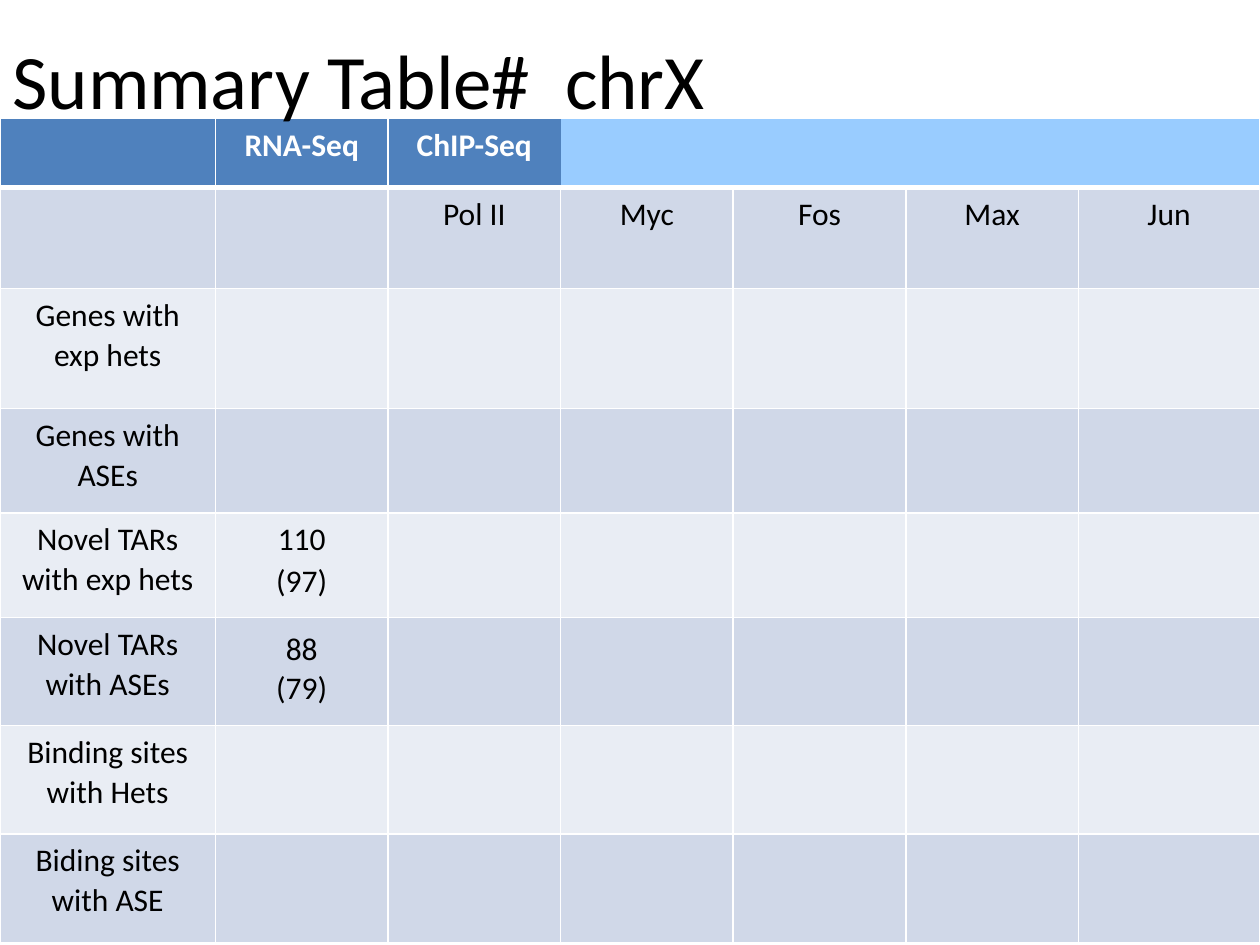
"""Build the chrX summary table slide."""
from dataclasses import dataclass

from lxml.etree import SubElement
from pptx import Presentation
from pptx.dml.color import RGBColor
from pptx.enum.text import MSO_ANCHOR, PP_ALIGN
from pptx.oxml.ns import qn
from pptx.util import Inches, Pt


@dataclass(frozen=True)
class Theme:
    font: str = "Calibri"
    title_size: int = 44
    cell_size: int = 18
    ink: str = "000000"
    white: str = "FFFFFF"
    header: str = "4F81BD"
    header_rest: str = "99CCFF"
    bands: tuple = ("E9EDF4", "D0D8E8")


THEME = Theme()


def style_paragraph(paragraph, size, color, bold=False):
    paragraph.font.name = THEME.font
    paragraph.font.size = Pt(size)
    paragraph.font.bold = bold
    paragraph.font.color.rgb = RGBColor.from_string(color)


def add_border(cell, side, width):
    line = SubElement(cell._tc.get_or_add_tcPr(), qn(f"a:ln{side}"), w=str(Pt(width)))
    if width:
        fill = SubElement(line, qn("a:solidFill"))
        SubElement(fill, qn("a:srgbClr"), val=THEME.white)
    else:
        SubElement(line, qn("a:noFill"))


column_widths = [1.71] + [1.37] * 5 + [1.44]
row_heights = [0.55, 0.8, 0.95, 0.83, 0.83, 0.86, 0.86, 0.86]
rows = [
    ["", "RNA-Seq", "ChIP-Seq"],
    ["", "", "Pol II", "Myc", "Fos", "Max", "Jun"],
    ["Genes with exp hets"],
    ["Genes with ASEs"],
    ["Novel TARs with exp hets", "110\n(97)"],
    ["Novel TARs with ASEs", "88\n(79)"],
    ["Binding sites with Hets"],
    ["Biding sites with ASE"],
]
last_column = len(column_widths) - 1
line_spacings = {(4, 1): (1.04, 1.08), (5, 1): (1.02, 1.02)}

prs = Presentation()
prs.slide_width, prs.slide_height = Inches(10), Inches(7.5)
slide = prs.slides.add_slide(prs.slide_layouts[6])

summary = slide.shapes.add_table(
    len(rows), len(column_widths), Inches(0), Inches(0.94),
    Inches(sum(column_widths)), Inches(sum(row_heights))).table
for column, width in zip(summary.columns, column_widths):
    column.width = Inches(width)

for r, (labels, height) in enumerate(zip(rows, row_heights)):
    summary.rows[r].height = Inches(height)
    is_header = r == 0
    for c in range(len(column_widths)):
        cell = summary.cell(r, c)
        cell.text = labels[c] if c < len(labels) else ""
        cell.margin_top = Inches(0.1 if (r, c) == (5, 1) else 0.05)
        spacings = line_spacings.get((r, c), (1.04,))
        for paragraph, spacing in zip(cell.text_frame.paragraphs, spacings):
            paragraph.alignment = PP_ALIGN.CENTER
            paragraph.line_spacing = spacing
            style_paragraph(paragraph, THEME.cell_size,
                            THEME.white if is_header else THEME.ink, is_header)

        add_border(cell, "L", 0 if is_header and c > 2 else 1)
        add_border(cell, "R", 0 if is_header and 2 <= c < last_column else 1)
        add_border(cell, "T", 3 if r == 1 else 1)
        add_border(cell, "B", 3 if is_header else 1)
        if is_header:
            color = THEME.header if c <= 2 else THEME.header_rest
        else:
            color = THEME.bands[r % 2]
        cell.fill.solid()
        cell.fill.fore_color.rgb = RGBColor.from_string(color)

title = slide.shapes.add_textbox(Inches(0), Inches(0), Inches(9), Inches(1.25)).text_frame
title.word_wrap = True
title.vertical_anchor = MSO_ANCHOR.MIDDLE
title.text = "Summary Table#  chrX"
style_paragraph(title.paragraphs[0], THEME.title_size, THEME.ink)

prs.save("out.pptx")
